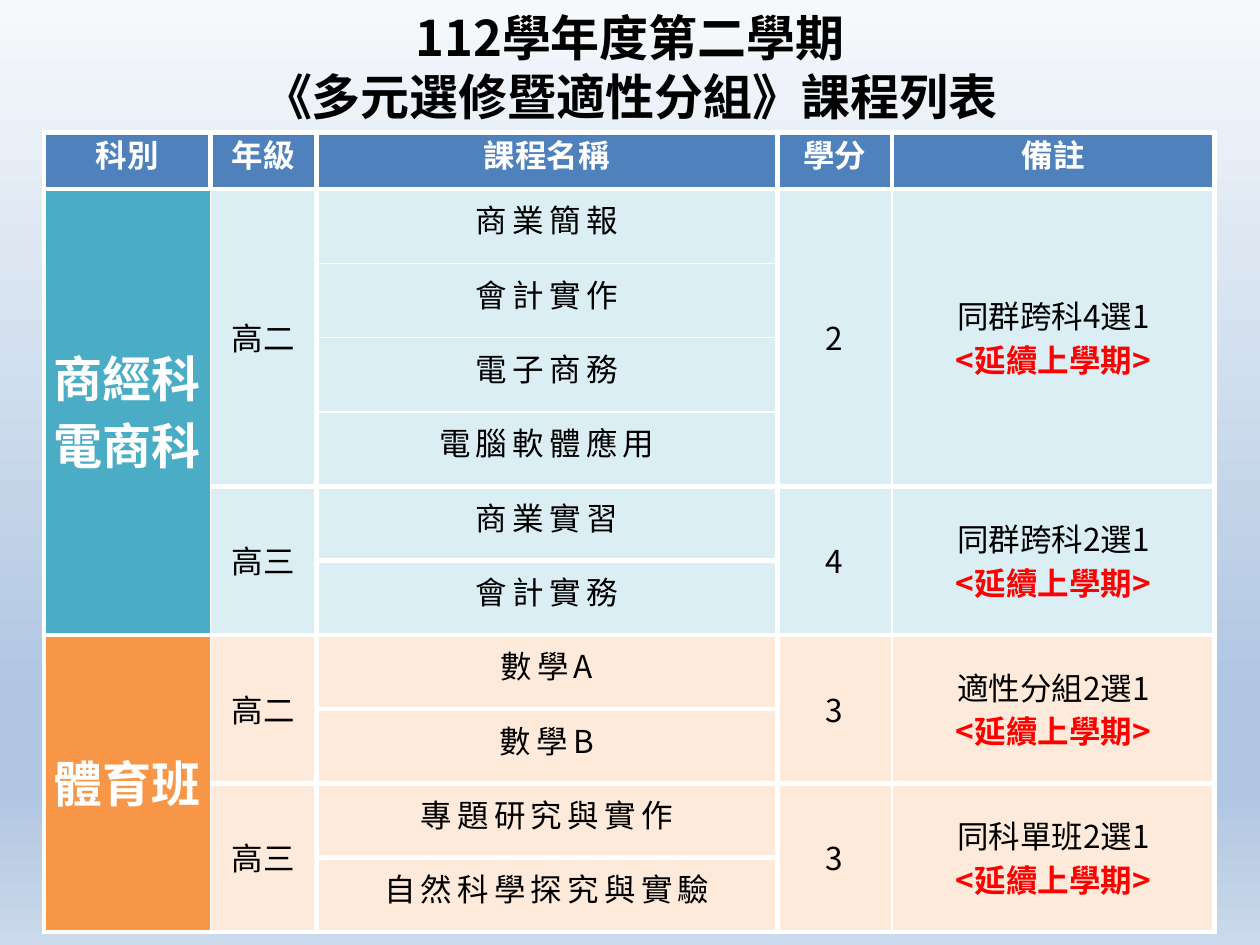
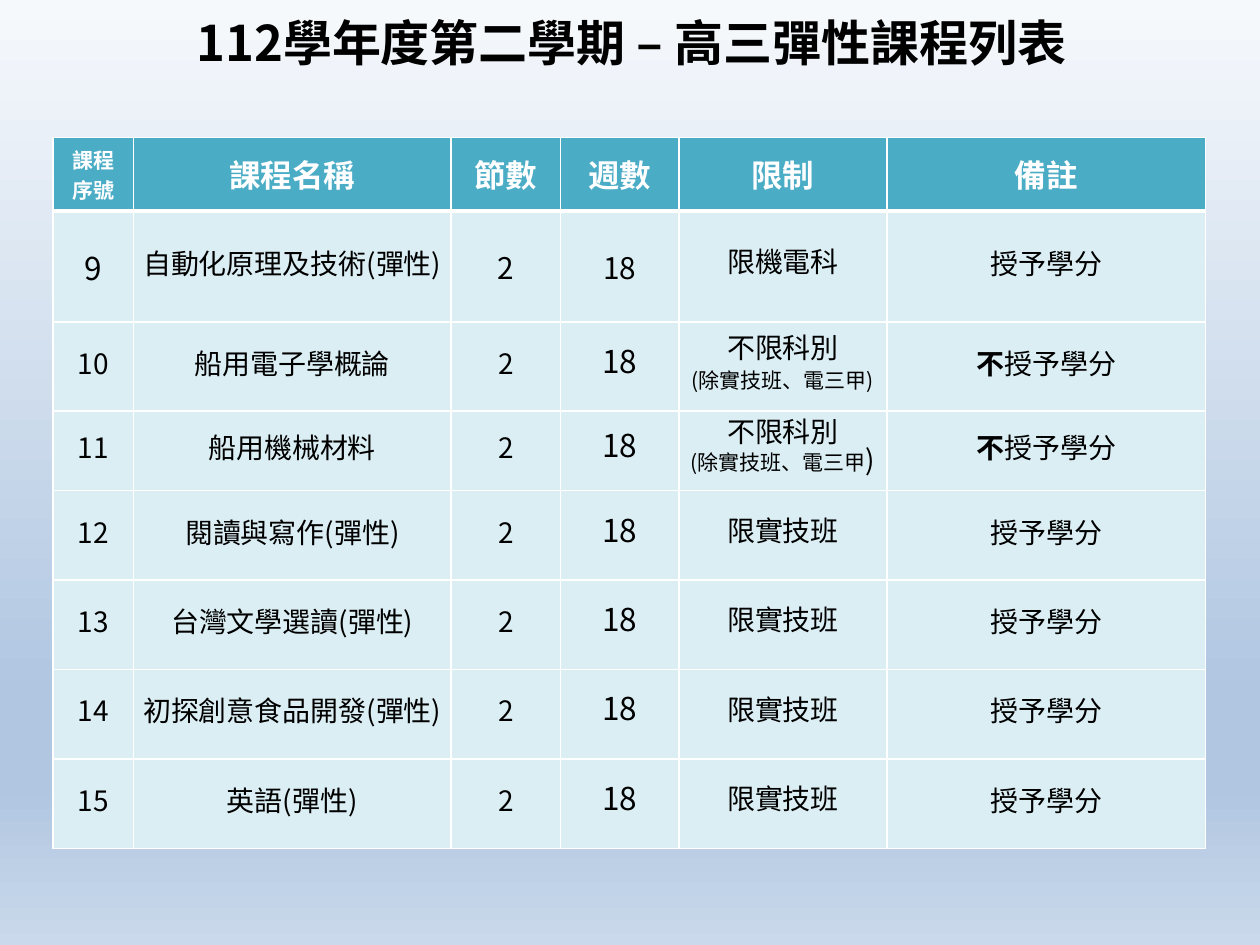
from lxml.etree import SubElement
from pptx import Presentation
from pptx.dml.color import RGBColor
from pptx.enum.text import MSO_ANCHOR, MSO_AUTO_SIZE, PP_ALIGN
from pptx.oxml import parse_xml
from pptx.oxml.ns import nsdecls, qn
from pptx.util import Inches, Pt

FONT = "Noto Sans CJK SC"
BLACK = RGBColor(0x00, 0x00, 0x00)
WHITE = RGBColor(0xFF, 0xFF, 0xFF)
RED = RGBColor(0xFF, 0x00, 0x00)
BLUE = RGBColor(0x4F, 0x81, 0xBD)
TEAL = RGBColor(0x4B, 0xAC, 0xC6)
PALE_TEAL = RGBColor(0xDB, 0xEE, 0xF4)
ORANGE = RGBColor(0xF7, 0x96, 0x46)
PALE_ORANGE = RGBColor(0xFD, 0xEA, 0xDA)
SKY_TOP = RGBColor(0xF6, 0xF9, 0xFC)
SKY_DEEP = RGBColor(0xB0, 0xC6, 0xE1)
SKY_FOOT = RGBColor(0xCA, 0xD9, 0xEB)
SKY = [(0, SKY_TOP), (74, SKY_DEEP), (83, SKY_DEEP), (100, SKY_FOOT)]

THIN, THICK = 1, 3
NO_INSET = (0, 0)
NARROW_INSET = (0.02, 0)
COURSE_INSET = (0.07, 0)
WIDE_INSET = (0.1, 0.05)

ELECTIVE_HEADINGS = ["科別", "年級", "課程名稱", "學分", "備註"]
CONTINUED = "<延續上學期>"
PROGRAMS = [
    (["商經科", "電商科"], TEAL, PALE_TEAL, [
        ("高二", ["商業簡報", "會計實作", "電子商務", "電腦軟體應用"], "2", "同群跨科4選1"),
        ("高三", ["商業實習", "會計實務"], "4", "同群跨科2選1"),
    ]),
    (["體育班"], ORANGE, PALE_ORANGE, [
        ("高二", ["數學A", "數學B"], "3", "適性分組2選1"),
        ("高三", ["專題研究與實作", "自然科學探究與實驗"], "3", "同科單班2選1"),
    ]),
]

FLEXIBLE_HEADINGS = ["課程序號", "課程名稱", "節數", "週數", "限制", "備註"]
OPEN = "不限科別"
EXCEPT = "(除實技班、電三甲"
FLEXIBLE_COURSES = [
    ("自動化原理及技術(彈性)", "限機電科", None, True),
    ("船用電子學概論", OPEN, 12, False),
    ("船用機械材料", OPEN, 16, False),
    ("閱讀與寫作(彈性)", "限實技班", None, True),
    ("台灣文學選讀(彈性)", "限實技班", None, True),
    ("初探創意食品開發(彈性)", "限實技班", None, True),
    ("英語(彈性)", "限實技班", None, True),
]


class Deck:
    def __init__(self):
        self.presentation = Presentation()
        self.presentation.slide_width = Inches(10)
        self.presentation.slide_height = Inches(7.5)
        self.slide = None
        self.sky()

    def sky(self):
        master = self.presentation.slide_master
        fill = master.background.fill
        fill.gradient()
        fill.gradient_angle = 270
        stops = master.element.find(".//" + qn("a:gsLst"))
        for stop in list(stops):
            stops.remove(stop)
        for percent, color in SKY:
            stop = SubElement(stops, qn("a:gs"), pos=str(percent * 1000))
            SubElement(stop, qn("a:srgbClr"), val=str(color))

    def add_slide(self):
        self.slide = self.presentation.slides.add_slide(self.presentation.slide_layouts[5])

    def title(self, text, left, top, width, height):
        title = self.slide.shapes.title
        title.left, title.top = Inches(left), Inches(top)
        title.width, title.height = Inches(width), Inches(height)
        frame = title.text_frame
        frame.auto_size = MSO_AUTO_SIZE.NONE
        frame.vertical_anchor = MSO_ANCHOR.MIDDLE
        self.paragraph(frame, text, 28, bold=True)

    def paragraph(self, frame, text, size, color=BLACK, bold=False, leading=None, tracking=0):
        first = frame.paragraphs[0]
        paragraph = frame.add_paragraph() if first.runs else first
        paragraph.text = text
        paragraph.alignment = PP_ALIGN.CENTER
        if leading:
            paragraph.line_spacing = Pt(leading)
        font = paragraph.font
        font.name, font.size, font.bold = FONT, Pt(size), bold
        font.color.rgb = color
        properties = paragraph._p.pPr.find(qn("a:defRPr"))
        SubElement(properties, qn("a:ea"), typeface=FONT)
        if tracking:
            properties.set("spc", str(tracking * 100))
        return paragraph

    def table(self, left, top, widths, heights):
        frame = self.slide.shapes.add_table(
            len(heights), len(widths), Inches(left), Inches(top),
            Inches(sum(widths)), Inches(sum(heights)))
        table = frame.table
        table.first_row = table.horz_banding = False
        for column, width in zip(table.columns, widths):
            column.width = Inches(width)
        for row, height in zip(table.rows, heights):
            row.height = Inches(height)
        return table

    def cell(self, cell, fill, inset, lines=(), **style):
        cell.fill.solid()
        cell.fill.fore_color.rgb = fill
        cell.vertical_anchor = MSO_ANCHOR.MIDDLE
        cell.margin_left = cell.margin_right = Inches(inset[0])
        cell.margin_top = cell.margin_bottom = Inches(inset[1])
        for line in lines:
            self.paragraph(cell.text_frame, line, **style)
        return cell.text_frame

    def borders(self, cell, left, right, top, bottom):
        properties = cell._tc.get_or_add_tcPr()
        for index, (side, width) in enumerate(zip("LRTB", (left, right, top, bottom))):
            properties.insert(index, parse_xml(
                f'<a:ln{side} {nsdecls("a")} w="{Pt(width)}"><a:solidFill>'
                f'<a:srgbClr val="{WHITE}"/></a:solidFill></a:ln{side}>'))

    def save(self):
        self.presentation.save("out.pptx")


def elective_slide(deck):
    deck.add_slide()
    deck.title("112學年度第二學期\v《多元選修暨適性分組》課程列表", 0.59, 0.02, 8.82, 1.02)
    table = deck.table(0.35, 1.05, [1.32, 0.84, 3.66, 0.91, 2.56], [0.45] + [0.59] * 10)
    for column, heading in enumerate(ELECTIVE_HEADINGS):
        deck.cell(table.cell(0, column), BLUE, NO_INSET, [heading],
                  size=18, color=WHITE, bold=True, leading=18)
        deck.borders(table.cell(0, column), *[THICK] * 4)

    verticals = [THICK, THIN, THICK, THICK, THIN, THICK]
    row = 1
    for names, strong, pale, groups in PROGRAMS:
        program_row = row
        for grade, courses, credits, choice in groups:
            last = row + len(courses) - 1
            separator = THIN if len(courses) > 2 else THICK
            for course_row, course in enumerate(courses, row):
                deck.cell(table.cell(course_row, 2), pale, COURSE_INSET, [course],
                          size=18, leading=18, tracking=3)
                for column in range(5):
                    inner = separator if column == 2 else THICK
                    deck.borders(table.cell(course_row, column),
                                 verticals[column], verticals[column + 1],
                                 THICK if course_row == row else inner,
                                 THICK if course_row == last else inner)
            for column, lines in ((1, [grade]), (3, [credits]), (4, [])):
                table.cell(row, column).merge(table.cell(last, column))
                frame = deck.cell(table.cell(row, column), pale, NO_INSET, lines,
                                  size=18, leading=25)
            note = deck.paragraph(frame, choice, 18, leading=25)
            note.add_line_break()
            continued = note.add_run()
            continued.text = CONTINUED
            continued.font.bold = True
            continued.font.color.rgb = RED
            row = last + 1
        table.cell(program_row, 0).merge(table.cell(row - 1, 0))
        deck.cell(table.cell(program_row, 0), strong, NO_INSET, names,
                  size=28, color=WHITE, bold=True, leading=38)


def flexible_slide(deck):
    deck.add_slide()
    deck.title("112學年度第二學期 – 高三彈性課程列表", 0.51, 0.02, 9, 0.63)
    table = deck.table(0.42, 1.09, [0.64, 2.52, 0.87, 0.94, 1.65, 2.53],
                       [0.58, 0.88, 0.71, 0.63] + [0.71] * 4)
    for column, heading in enumerate(FLEXIBLE_HEADINGS):
        deck.cell(table.cell(0, column), TEAL, WIDE_INSET, [heading],
                  size=18 if column else 12, color=WHITE, bold=True)
        deck.borders(table.cell(0, column), THIN, THIN, THIN, THICK)

    for row, (course, limit, closing_size, credited) in enumerate(FLEXIBLE_COURSES, 1):
        first = row == 1
        inset, leading = (WIDE_INSET, None) if first else (NARROW_INSET, 18)
        sizes = (18, 17, 17) if first else (16, 16, 18)
        for column, text, size in zip((0, 2, 3), (str(row + 8), "2", "18"), sizes):
            deck.cell(table.cell(row, column), PALE_TEAL, inset, [text],
                      size=size, leading=leading)
        deck.cell(table.cell(row, 1), PALE_TEAL, NARROW_INSET, [course], size=16, leading=18)

        limits = deck.cell(table.cell(row, 4), PALE_TEAL, NARROW_INSET, [limit],
                           size=16, leading=16)
        if closing_size:
            exception = deck.paragraph(limits, EXCEPT, 12, leading=16)
            closing = exception.add_run()
            closing.text = ")"
            closing.font.size = Pt(closing_size)

        remark = deck.cell(table.cell(row, 5), PALE_TEAL, NARROW_INSET,
                           ["授予學分" if credited else "不"], size=16, leading=18)
        if not credited:
            remark.paragraphs[0].runs[0].font.bold = True
            remark.paragraphs[0].add_run().text = "授予學分"
        for column in range(6):
            deck.borders(table.cell(row, column), THIN, THIN, THICK if first else THIN, THIN)


def main():
    deck = Deck()
    elective_slide(deck)
    flexible_slide(deck)
    deck.save()


if __name__ == "__main__":
    main()
